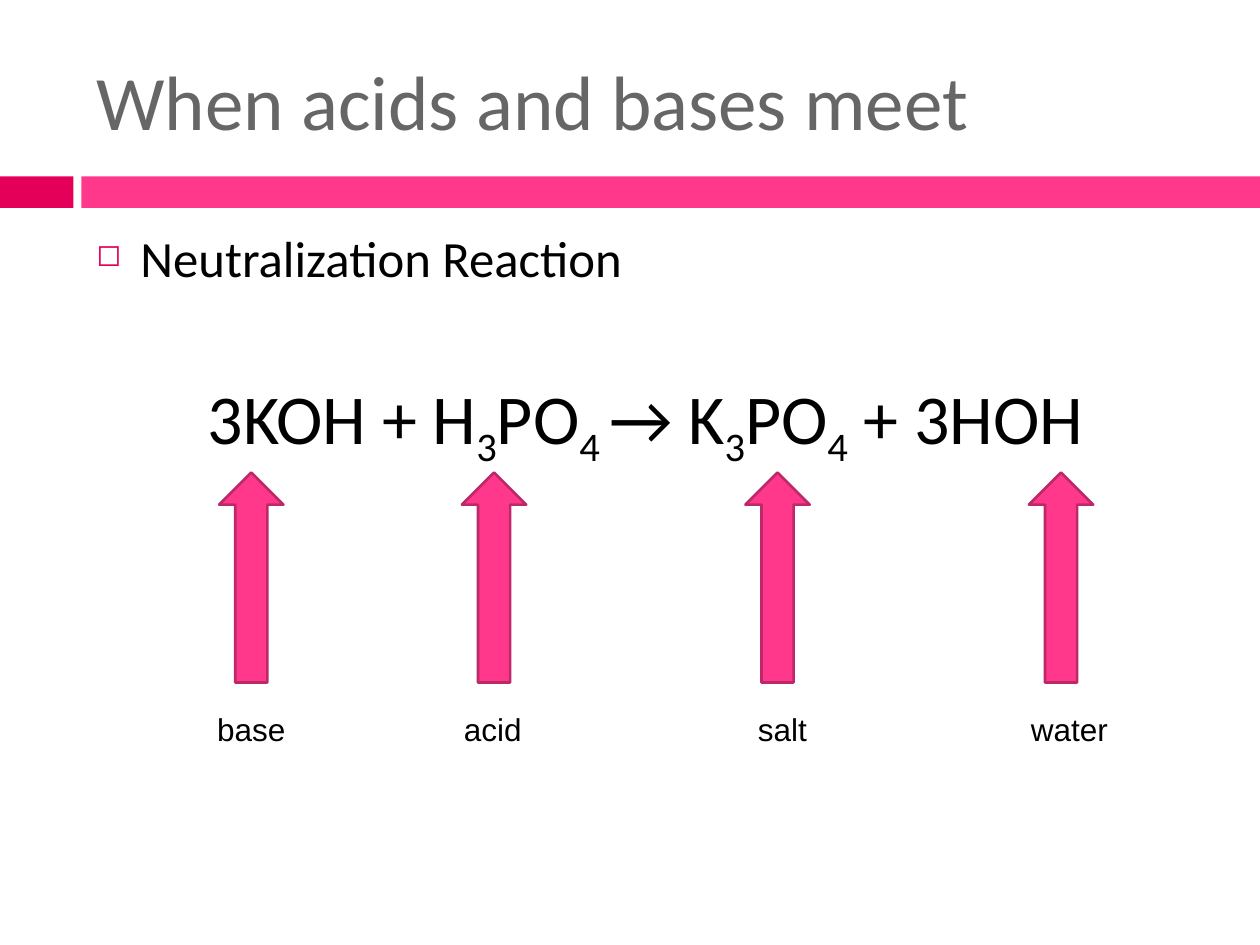
"""Build the slide on the neutralization reaction of an acid and a base."""
from lxml import etree
from pptx import Presentation
from pptx.dml.color import RGBColor
from pptx.enum import shapes, text
from pptx.oxml import ns
from pptx.util import Pt

CRIMSON = RGBColor(0xE4, 0x00, 0x59)
PINK = RGBColor(0xFF, 0x38, 0x8C)
PLUM = RGBColor(0xBD, 0x29, 0x68)
GRAY = RGBColor(0x66, 0x66, 0x66)
BLACK = RGBColor(0, 0, 0)
WHITE = RGBColor(0xFF, 0xFF, 0xFF)

TITLE = "When acids and bases meet"
TOPIC = "Neutralization Reaction"
EQUATION = ["3KOH + H", "3", "PO", "4 ", "→ K", "3", "PO", "4", " + 3HOH"]
BANDS = [(0, 42, CRIMSON), (46.5, 673.5, PINK)]
SUBSTANCES = [
    ("base", 125.25, 117, 54),
    ("acid", 264, 258, 54),
    ("salt", 426, 426, 54),
    ("water", 588, 582, 72),
]
BAND_TOP, BAND_HEIGHT = 100.8, 18
ARROW_TOP, ARROW_WIDTH, ARROW_HEIGHT = 270, 36.75, 120
LABEL_TOP, LABEL_HEIGHT = 402, 29


def add_filled(slide, kind, box, color):
    shape = slide.shapes.add_shape(kind, *map(Pt, box))
    shape.shadow.inherit = False
    shape.fill.solid()
    shape.fill.fore_color.rgb = color
    shape.line.fill.background()
    return shape


def add_text(slide, box, content):
    frame = slide.shapes.add_textbox(*map(Pt, box)).text_frame
    frame.word_wrap = True
    frame.text = content
    return frame


def style_run(run, size, color=BLACK, name="Calibri"):
    run.font.size = Pt(size)
    run.font.name = name
    run.font.color.rgb = color


def add_bullet(paragraph, character, color, percent, indent):
    properties = paragraph._p.get_or_add_pPr()
    properties.set("marL", str(Pt(indent)))
    properties.set("indent", str(-Pt(indent)))
    bullet_color = etree.SubElement(properties, ns.qn("a:buClr"))
    etree.SubElement(bullet_color, ns.qn("a:srgbClr"), val=str(color))
    etree.SubElement(properties, ns.qn("a:buSzPct"), val=str(percent * 1000))
    etree.SubElement(properties, ns.qn("a:buChar"), char=character)


def add_body(slide):
    frame = add_text(slide, (48, 126, 642, 138), TOPIC)
    topic = frame.paragraphs[0]
    topic.space_before = Pt(7)
    add_bullet(topic, "◻", CRIMSON, 60, 25.2)
    style_run(topic.runs[0], 29)

    equation = frame.add_paragraph()
    equation.alignment = text.PP_ALIGN.CENTER
    equation.space_before = Pt(49.4)
    for index, part in enumerate(EQUATION):
        run = equation.add_run()
        run.text = part
        style_run(run, 40)
        if index % 2:
            run.font._element.set("baseline", "-25000")


def main():
    presentation = Presentation()
    presentation.slide_width, presentation.slide_height = Pt(720), Pt(540)
    slide = presentation.slides.add_slide(presentation.slide_layouts[6])
    slide.background.fill.solid()
    slide.background.fill.fore_color.rgb = WHITE

    for left, width, color in BANDS:
        box = (left, BAND_TOP, width, BAND_HEIGHT)
        add_filled(slide, shapes.MSO_SHAPE.RECTANGLE, box, color)

    title = add_text(slide, (48, 18, 642, 78), TITLE)
    title.vertical_anchor = text.MSO_ANCHOR.MIDDLE
    style_run(title.paragraphs[0].runs[0], 44, GRAY)
    add_body(slide)

    for name, arrow_left, label_left, label_width in SUBSTANCES:
        box = (arrow_left, ARROW_TOP, ARROW_WIDTH, ARROW_HEIGHT)
        arrow = add_filled(slide, shapes.MSO_SHAPE.UP_ARROW, box, PINK)
        arrow.line.color.rgb = PLUM
        arrow.line.width = Pt(1.5)
        label = add_text(slide, (label_left, LABEL_TOP, label_width, LABEL_HEIGHT), name)
        style_run(label.paragraphs[0].runs[0], 18, name="Arial")

    presentation.save("out.pptx")


if __name__ == "__main__":
    main()
